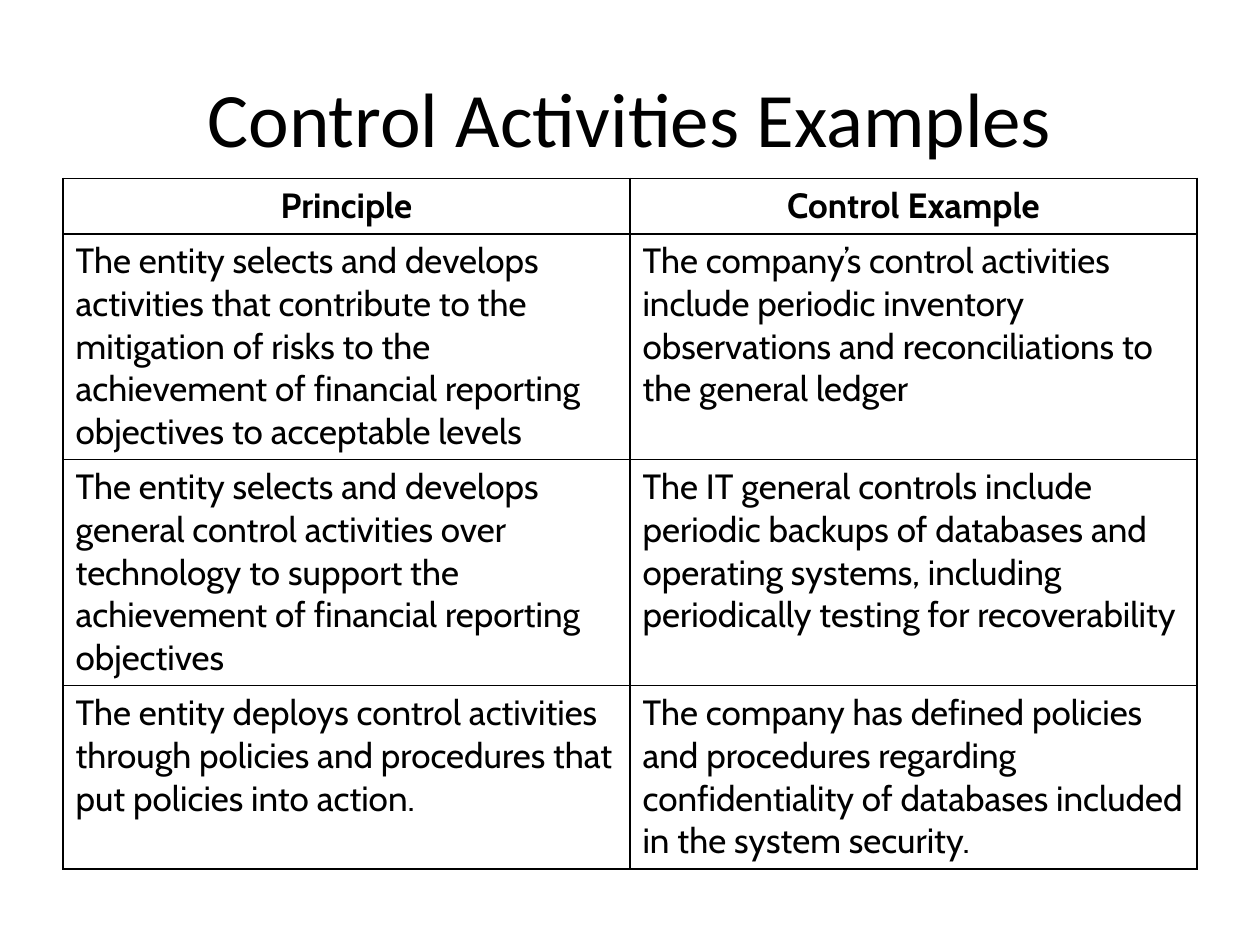
"""Build the slide on control activities with a bordered two-column table."""
from dataclasses import dataclass, field
from typing import Any

from lxml import etree
from pptx import Presentation
from pptx.dml.color import RGBColor
from pptx.enum.text import MSO_ANCHOR, PP_ALIGN
from pptx.oxml.ns import qn
from pptx.util import Pt

CENTER = PP_ALIGN.CENTER
LEFT = PP_ALIGN.LEFT
MIDDLE = MSO_ANCHOR.MIDDLE
TOP = MSO_ANCHOR.TOP
BORDER_SIDES = ("lnL", "lnR", "lnT", "lnB")


@dataclass(frozen=True)
class Theme:
    ink: str = "000000"
    border_width: float = 1
    title_font: dict[str, Any] = field(
        default_factory=lambda: {"name": "Calibri", "size": Pt(44), "bold": False})
    header_font: dict[str, Any] = field(
        default_factory=lambda: {"name": "Cabin", "size": Pt(20), "bold": True})
    body_font: dict[str, Any] = field(
        default_factory=lambda: {"name": "Cabin", "size": Pt(20), "bold": False})


@dataclass(frozen=True)
class Row:
    height: float
    principle: str
    example: str


THEME = Theme()
TITLE_BOX = {"left": Pt(36), "top": Pt(21.6), "width": Pt(648), "height": Pt(90)}
TABLE_BOX = {"left": Pt(36), "top": Pt(102), "width": Pt(648), "height": Pt(389)}
CELL_FORMAT = {"margin_left": Pt(7.2), "margin_right": Pt(7.2), "margin_top": Pt(3.6),
               "margin_bottom": Pt(3.6), "vertical_anchor": TOP}
ROWS = [
    Row(31, "Principle", "Control Example"),
    Row(127.5,
        "The entity selects and develops activities that contribute to the mitigation of "
        "risks to the achievement of financial reporting objectives to acceptable levels",
        "The company’s control activities include periodic inventory observations and "
        "reconciliations to the general ledger"),
    Row(127.5,
        "The entity selects and develops general control activities over technology to "
        "support the achievement of financial reporting objectives",
        "The IT general controls include periodic backups of databases and operating "
        "systems, including periodically testing for recoverability"),
    Row(103,
        "The entity deploys control activities through policies and procedures that put "
        "policies into action.",
        "The company has defined policies and procedures regarding confidentiality of "
        "databases included in the system security."),
]


def apply_format(target: Any, values: dict[str, Any]) -> None:
    for name, value in values.items():
        setattr(target, name, value)


def write_text(frame: Any, text: str, font: dict[str, Any], alignment: Any) -> None:
    para = frame.paragraphs[0]
    para.alignment = alignment
    span = para.add_run()
    span.text = text
    apply_format(span.font, font)
    span.font.color.rgb = RGBColor.from_string(THEME.ink)


def add_borders(cell: Any) -> None:
    properties = cell._tc.get_or_add_tcPr()
    for position, side in enumerate(BORDER_SIDES):
        line = etree.Element(qn(f"a:{side}"), w=str(Pt(THEME.border_width)))
        fill = etree.SubElement(line, qn("a:solidFill"))
        etree.SubElement(fill, qn("a:srgbClr"), val=THEME.ink)
        properties.insert(position, line)


def add_title(page: Any, text: str) -> None:
    title = page.shapes.title
    apply_format(title, TITLE_BOX)
    apply_format(title.text_frame, {"vertical_anchor": MIDDLE, "word_wrap": True})
    write_text(title.text_frame, text, THEME.title_font, CENTER)


def add_control_table(page: Any, rows: list[Row]) -> None:
    table = page.shapes.add_table(len(rows), 2, **TABLE_BOX).table
    apply_format(table, {"first_row": False, "horz_banding": False})
    for row_index, row in enumerate(rows):
        table.rows[row_index].height = Pt(row.height)
        is_header = row_index == 0
        font = THEME.header_font if is_header else THEME.body_font
        alignment = CENTER if is_header else LEFT
        for column_index, text in enumerate((row.principle, row.example)):
            cell = table.cell(row_index, column_index)
            apply_format(cell, CELL_FORMAT)
            cell.fill.background()
            add_borders(cell)
            write_text(cell.text_frame, text, font, alignment)


def main() -> None:
    deck = Presentation()
    apply_format(deck, {"slide_width": Pt(720), "slide_height": Pt(540)})
    page = deck.slides.add_slide(deck.slide_layouts.get_by_name("Title Only"))
    add_title(page, "Control Activities Examples")
    add_control_table(page, ROWS)
    deck.save("out.pptx")


if __name__ == "__main__":
    main()
